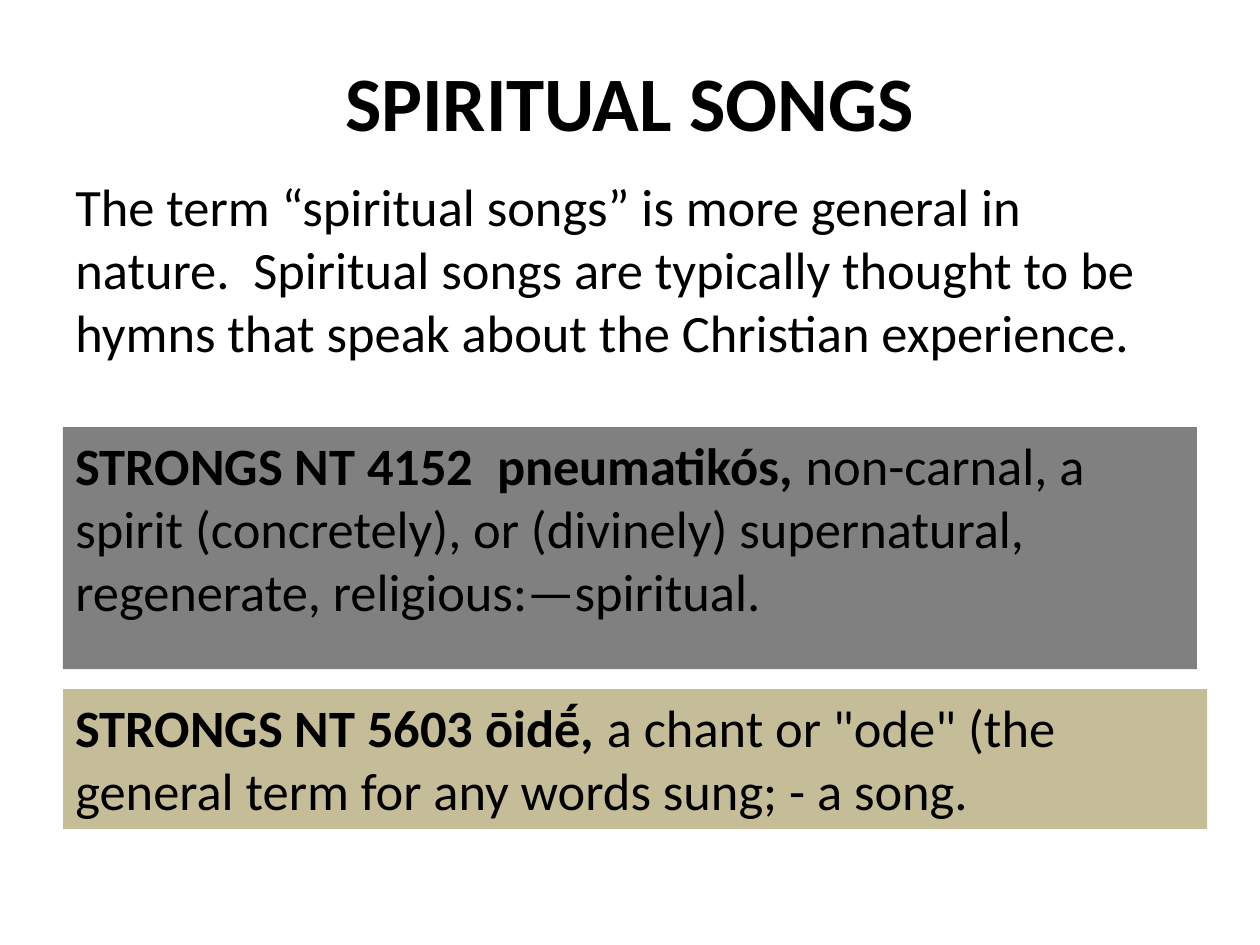
from pptx import Presentation, util as u
from pptx.dml.color import RGBColor
from pptx.enum import text

FONT = "Calibri"
LEFT = 0.5


def color(code):
    return RGBColor.from_string(code)


def add_text(slide, box, parts, size=30, fill=None):
    """Add a text box; parts are (words, bold) pairs of one paragraph."""
    shape = slide.shapes.add_textbox(*map(u.Inches, box))
    if fill:
        shape.fill.solid()
        shape.fill.fore_color.rgb = color(fill)
    frame = shape.text_frame
    frame.word_wrap = True
    para = frame.paragraphs[0]
    for words, bold in parts:
        run = para.add_run()
        run.text = words
        run.font.name = FONT
        run.font.size = u.Pt(size)
        run.font.bold = bold
        run.font.color.rgb = color("000000")
    return frame


def add_title(slide, words):
    frame = add_text(slide, (LEFT, 0.17, 9, 1.25), [(words, True)], 44)
    frame.vertical_anchor = text.MSO_ANCHOR.MIDDLE
    frame.paragraphs[0].alignment = text.PP_ALIGN.CENTER


def add_entry(slide, box, term, sense, fill):
    add_text(slide, box, [(term, True), (sense, False)], fill=fill)


def main():
    deck = Presentation()
    deck.slide_width, deck.slide_height = u.Inches(10), u.Inches(7.5)
    slide = deck.slides.add_slide(deck.slide_layouts[6])

    # Title and introduction
    add_title(slide, "SPIRITUAL SONGS")
    intro = ("The term “spiritual songs” is more general in nature.  "
             "Spiritual songs are typically thought to be hymns that speak "
             "about the Christian experience.")
    add_text(slide, (LEFT, 1.33, 8.83, 1.62), [(intro, False)])

    # Dictionary entries
    add_entry(slide, (LEFT, 3.39, 9, 1.92),
              "STRONGS NT 4152  pneumatikós,",
              " non-carnal, a spirit (concretely), or (divinely) "
              "supernatural, regenerate, religious:—spiritual. ", "808080")
    add_entry(slide, (LEFT, 5.47, 9.08, 1.11),
              "STRONGS NT 5603 ōidḗ,",
              ' a chant or "ode" (the general term for any words sung; '
              "- a song.", "C4BD97")

    deck.save("out.pptx")


if __name__ == "__main__":
    main()
